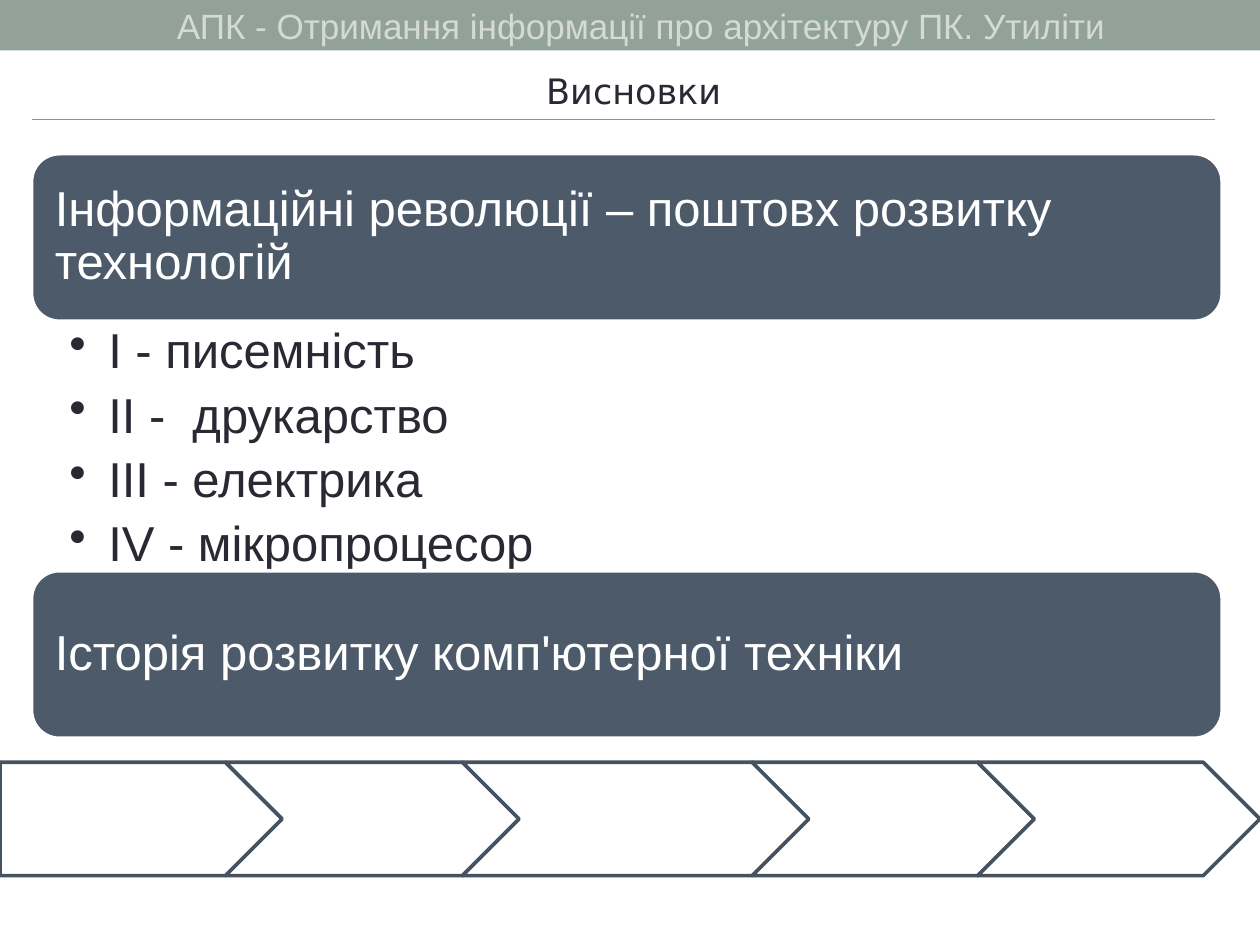
import pptx
import pptx.dml.color
import pptx.enum.shapes
import pptx.enum.text
import pptx.util
from lxml import etree

Inches = pptx.util.Inches
Pt = pptx.util.Pt
Kind = pptx.enum.shapes.MSO_SHAPE
Align = pptx.enum.text.PP_ALIGN
Anchor = pptx.enum.text.MSO_ANCHOR


def color(code):
    return pptx.dml.color.RGBColor.from_string(code)


def write(frame, text, font="Arial", size=28, ink="292934", align=Align.LEFT,
          anchor=Anchor.TOP, inset=(0.1, 0.05, 0.1, 0.05), line=1.0, after=0,
          bullet=False):
    frame.word_wrap = True
    frame.vertical_anchor = anchor
    (frame.margin_left, frame.margin_top,
     frame.margin_right, frame.margin_bottom) = map(Inches, inset)
    for i, words in enumerate(text.split("\n")):
        para = frame.paragraphs[0] if i == 0 else frame.add_paragraph()
        para.alignment = align
        para.line_spacing = line
        para.space_after = Pt(after)
        run = para.add_run()
        run.text = words
        run.font.name = font
        run.font.size = Pt(size)
        run.font.color.rgb = color(ink)
        if bullet:
            para.level = 1
            props = para._p.get_or_add_pPr()
            props.set("marL", str(Inches(0.31)))
            props.set("indent", str(-Inches(0.31)))
            mark = etree.SubElement(props, pptx.oxml.ns.qn("a:buChar"))
            mark.set("char", "•")


class Deck:
    band = "93A299"
    gold = "AD8F67"
    slate = "4C5A6A"
    edge = "455260"
    white = "FFFFFF"
    pale = "D4DAD6"
    width = 2.08

    def __init__(self):
        self.file = pptx.Presentation()
        self.file.slide_width = Inches(10)
        self.file.slide_height = Inches(7.5)
        self.slide = self.file.slides.add_slide(self.file.slide_layouts[6])

    def shape(self, kind, box, fill, line=None):
        item = self.slide.shapes.add_shape(kind, *map(Inches, box))
        item.shadow.inherit = False
        item.fill.solid()
        item.fill.fore_color.rgb = color(fill)
        if line:
            item.line.color.rgb = color(line)
            item.line.width = Pt(self.width)
        else:
            item.line.fill.background()
        return item

    def text(self, box, words, **style):
        item = self.slide.shapes.add_textbox(*map(Inches, box))
        write(item.text_frame, words, **style)

    def rule(self, left, right, top):
        item = self.slide.shapes.add_connector(
            pptx.enum.shapes.MSO_CONNECTOR.STRAIGHT,
            Inches(left), Inches(top), Inches(right), Inches(top))
        item.line.color.rgb = color(self.gold)
        item.line.width = Pt(0.75)
        etree.SubElement(item._element.spPr, pptx.oxml.ns.qn("a:effectLst"))

    def card(self, top, words):
        item = self.shape(Kind.ROUNDED_RECTANGLE, (0.25, top, 9.45, 1.33),
                          self.slate, self.white)
        write(item.text_frame, words, ink=self.white, anchor=Anchor.MIDDLE,
              inset=(0.12,) * 4, line=0.9)

    def chain(self, top, high, sizes):
        left = 0
        for i, wide in enumerate(sizes):
            kind = Kind.CHEVRON if i else Kind.PENTAGON
            self.shape(kind, (left, top, wide, high), self.white, self.edge)
            left += wide - high / 2


def main():
    deck = Deck()
    deck.shape(Kind.RECTANGLE, (0, 0, 10, 0.4), deck.band)
    deck.rule(0.25, 9.64, 0.95)
    deck.text((0.42, 0.5, 9.22, 0.44), "Висновки",
              font="DejaVu Sans", size=20, align=Align.CENTER)
    deck.text((0.48, -0.01, 9.22, 0.44),
              "АПК - Отримання інформації про архітектуру ПК. Утиліти",
              size=20, ink=deck.pale, align=Align.CENTER)
    deck.card(1.22, "Інформаційні революції – поштовх розвитку технологій")
    deck.text((0.25, 2.55, 9.45, 1.99),
              "І - писемність\nІІ -  друкарство\n"
              "ІІІ - електрика\nІV - мікропроцесор",
              inset=(0.3, 0.04, 0.22, 0.04), line=0.9, after=6.5, bullet=True)
    deck.card(4.53, "Історія розвитку комп'ютерної техніки")
    deck.chain(6.05, 0.9, (2.24, 2.33, 2.75, 2.24, 2.24))
    deck.file.save("out.pptx")


if __name__ == "__main__":
    main()
